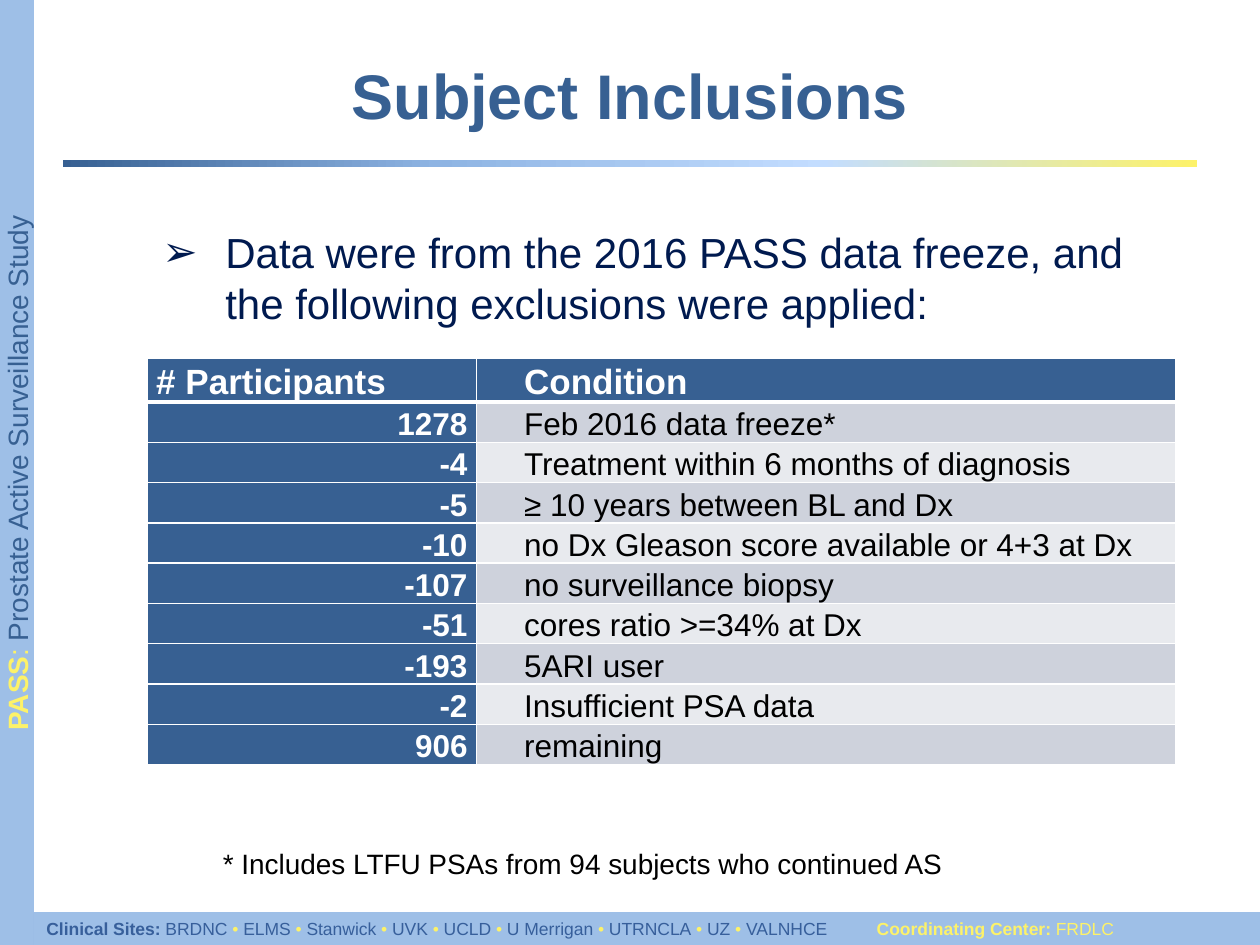
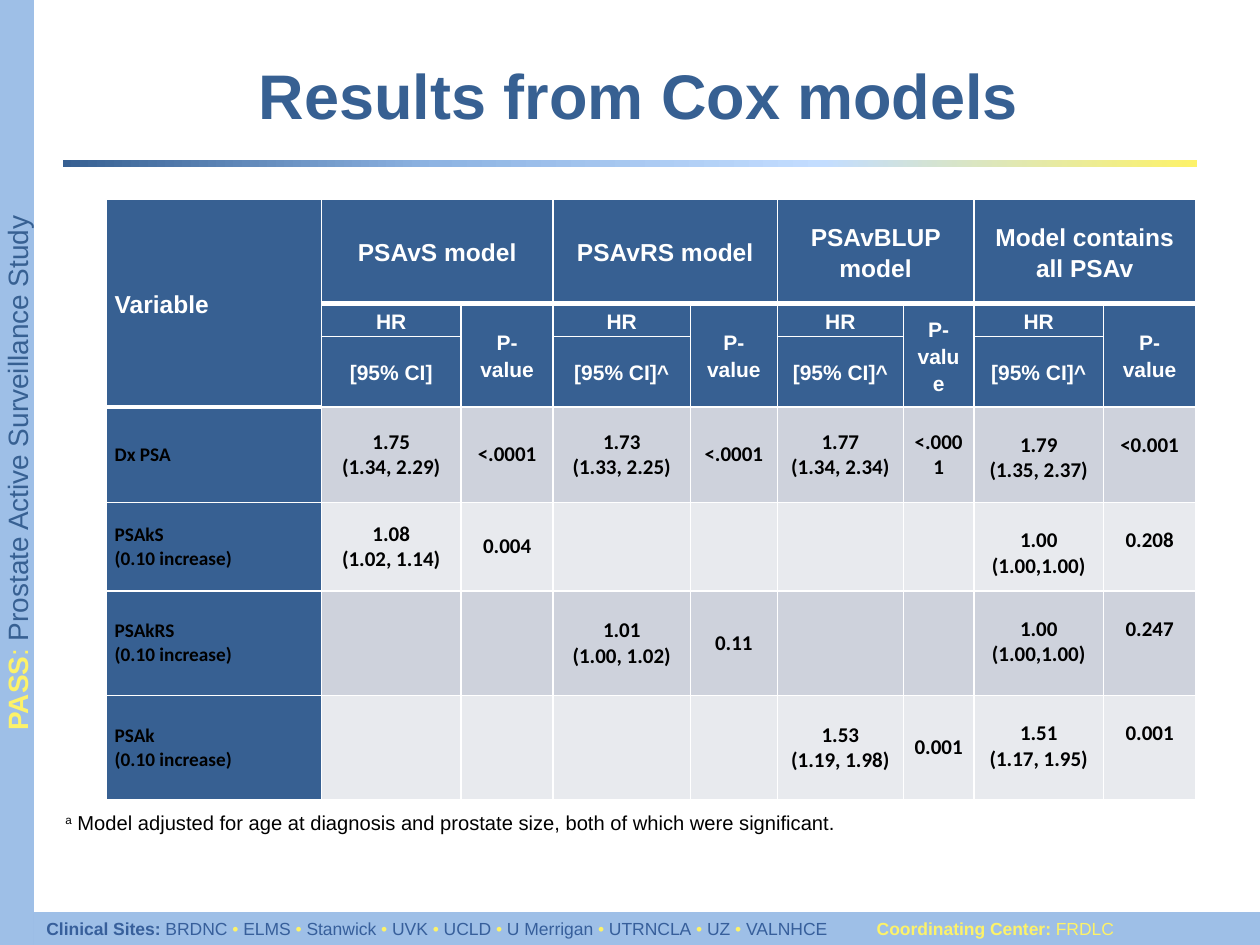
from lxml import etree
from pptx import Presentation
from pptx.dml.color import RGBColor
from pptx.enum.shapes import MSO_SHAPE as Shape
from pptx.enum.text import MSO_ANCHOR as Anchor, PP_ALIGN as Align
from pptx.oxml.ns import qn
from pptx.util import Inches, Pt

BLUE = RGBColor(0x37, 0x60, 0x92)
FOOTER_BLUE = RGBColor(0x37, 0x5F, 0x9B)
BAND_BLUE = RGBColor(0x8E, 0xB4, 0xE3)
PALE_BLUE = RGBColor(0xC3, 0xDD, 0xFF)
YELLOW = RGBColor(0xFD, 0xF2, 0x69)
NAVY = RGBColor(0x00, 0x1A, 0x4F)
DARK_ROW = RGBColor(0xCE, 0xD2, 0xDC)
LIGHT_ROW = RGBColor(0xE8, 0xEA, 0xEE)
WHITE = RGBColor(0xFF, 0xFF, 0xFF)
BLACK = RGBColor(0x00, 0x00, 0x00)

SITES = ["BRDNC", "ELMS", "Stanwick", "UVK", "UCLD", "U Merrigan",
         "UTRNCLA", "UZ", "VALNHCE"]
COORDINATING_CENTER = "FRDLC"

EXCLUSIONS = [
    ("1278", "Feb 2016 data freeze*"),
    ("-4", "Treatment within 6 months of diagnosis"),
    ("-5", "≥ 10 years between BL and Dx"),
    ("-10", "no Dx Gleason score available or 4+3 at Dx"),
    ("-107", "no surveillance biopsy"),
    ("-51", "cores ratio >=34% at Dx"),
    ("-193", "5ARI user"),
    ("-2", "Insufficient PSA data"),
    ("906", "remaining"),
]

MODELS = [
    ("PSAvS model", "[95% CI]"),
    ("PSAvRS model", "[95% CI]^"),
    ("PSAvBLUP model", "[95% CI]^"),
    ("Model contains all PSAv", "[95% CI]^"),
]

# Each variable has one (hazard ratio, interval, p-value) or None per model.
COX_RESULTS = [
    ("Dx PSA", [("1.75", "(1.34, 2.29)", "<.0001"),
                ("1.73", "(1.33, 2.25)", "<.0001"),
                ("1.77", "(1.34, 2.34)", "<.0001"),
                ("1.79", "(1.35, 2.37)", "<0.001")]),
    ("PSAkS\n(0.10 increase)", [("1.08", "(1.02, 1.14)", "0.004"), None, None,
                                ("1.00", "(1.00,1.00)", "0.208")]),
    ("PSAkRS\n(0.10 increase)", [None, ("1.01", "(1.00, 1.02)", "0.11"), None,
                                 ("1.00", "(1.00,1.00)", "0.247")]),
    ("PSAk\n(0.10 increase)", [None, None, ("1.53", "(1.19, 1.98)", "0.001"),
                               ("1.51", "(1.17, 1.95)", "0.001")]),
]


def box(left, top, width, height):
    return Inches(left), Inches(top), Inches(width), Inches(height)


def format_run(run, size, color, bold=False, font="Arial"):
    run.font.name = font
    run.font.size = Pt(size)
    run.font.bold = bold
    run.font.color.rgb = color


def add_runs(paragraph, size, pieces):
    """Append runs given as (text, colour, bold)."""
    for text, color, bold in pieces:
        run = paragraph.add_run()
        run.text = text
        format_run(run, size, color, bold)


def set_indent(paragraph, margin, indent):
    properties = paragraph._p.get_or_add_pPr()
    properties.set("marL", str(Inches(margin)))
    properties.set("indent", str(Inches(indent)))
    return properties


def add_band(slide, position):
    band = slide.shapes.add_shape(Shape.RECTANGLE, *box(*position))
    band.shadow.inherit = False
    band.line.fill.background()
    band.fill.solid()
    band.fill.fore_color.rgb = BAND_BLUE
    color = band._element.spPr.find(f".//{qn('a:srgbClr')}")
    etree.SubElement(color, qn("a:alpha"), val="85000")
    return band


def add_footer(slide):
    frame = add_band(slide, (0.27, 7.24, 9.73, 0.27)).text_frame
    frame.vertical_anchor = Anchor.TOP
    paragraph = frame.paragraphs[0]
    paragraph.alignment = Align.LEFT
    tabs = etree.SubElement(paragraph._p.get_or_add_pPr(), qn("a:tabLst"))
    etree.SubElement(tabs, qn("a:tab"), pos=str(Inches(6.59)), algn="l")

    pieces = [("Clinical Sites:", FOOTER_BLUE, True)]
    for index, site in enumerate(SITES):
        if index:
            pieces.append((" •", YELLOW, False))
        pieces.append((f" {site}", FOOTER_BLUE, False))
    pieces += [("\tCoordinating Center:", YELLOW, True),
               (f" {COORDINATING_CENTER}", YELLOW, False)]
    add_runs(paragraph, 10, pieces)


def add_sidebar(slide):
    frame = add_band(slide, (0, 0, 0.27, 7.51)).text_frame
    frame._txBody.bodyPr.set("vert", "vert270")
    frame.vertical_anchor = Anchor.MIDDLE
    frame.paragraphs[0].alignment = Align.CENTER
    add_runs(frame.paragraphs[0], 16, [
        ("PASS", YELLOW, True), (": ", YELLOW, False),
        ("Prostate Active Surveillance Study", BLUE, False)])


def add_gradient_rule(slide):
    rule = slide.shapes.add_shape(Shape.RECTANGLE, *box(0.5, 1.27, 9, 0.06))
    rule.shadow.inherit = False
    rule.line.fill.background()
    rule.fill.gradient()
    rule.fill.gradient_angle = 0
    stops = rule._element.spPr.find(f".//{qn('a:gsLst')}")
    for stop in list(stops):
        stops.remove(stop)
    for percent, color in [(0, BLUE), (33, BAND_BLUE), (67, PALE_BLUE), (100, YELLOW)]:
        stop = etree.SubElement(stops, qn("a:gs"), pos=str(percent * 1000))
        etree.SubElement(stop, qn("a:srgbClr"), val=str(color))


def add_text(slide, position, size, pieces):
    frame = slide.shapes.add_textbox(*box(*position)).text_frame
    frame.word_wrap = True
    add_runs(frame.paragraphs[0], size, pieces)
    return frame


def add_study_slide(presentation, title):
    slide = presentation.slides.add_slide(presentation.slide_layouts[6])
    add_footer(slide)
    add_sidebar(slide)
    add_gradient_rule(slide)
    frame = add_text(slide, (0.75, 0.25, 8.5, 1), 36, [(title, BLUE, True)])
    frame.vertical_anchor = Anchor.MIDDLE
    frame.paragraphs[0].alignment = Align.CENTER
    return slide


def add_bullet(slide, text):
    frame = add_text(slide, (0.75, 1.75, 8.5, 5.25), 24, [(text, NAVY, False)])
    paragraph = frame.paragraphs[0]
    paragraph.space_before = Pt(12)
    properties = set_indent(paragraph, 0.94, -0.5)
    etree.SubElement(properties, qn("a:buFont"), typeface="Arial")
    etree.SubElement(properties, qn("a:buChar"), char="➢")


def add_table(slide, left, top, widths, heights):
    """Add a table whose default style draws the thin white cell borders."""
    table = slide.shapes.add_table(
        len(heights), len(widths),
        *box(left, top, sum(widths), sum(heights))).table
    table.first_col = True
    for column, width in zip(table.columns, widths):
        column.width = Inches(width)
    for row, height in zip(table.rows, heights):
        row.height = Inches(height)
    return table


def fill_cell(cell, text, fill, size, color, bold=True, font="Arial",
              align=Align.LEFT, anchor=Anchor.MIDDLE, spacing=1.15, indent=0):
    cell.fill.solid()
    cell.fill.fore_color.rgb = fill
    cell.margin_left = cell.margin_right = Inches(0.07)
    cell.margin_top = cell.margin_bottom = 0
    cell.vertical_anchor = anchor
    cell.text_frame.text = text
    for paragraph in cell.text_frame.paragraphs:
        paragraph.alignment = align
        paragraph.line_spacing = spacing
        if indent:
            set_indent(paragraph, 0, indent)
        for run in paragraph.runs:
            format_run(run, size, color, bold, font)


def thicken_bottom(cell):
    line = etree.Element(qn("a:lnB"), w=str(Pt(3)))
    solid = etree.SubElement(line, qn("a:solidFill"))
    etree.SubElement(solid, qn("a:srgbClr"), val=str(WHITE))
    cell._tc.get_or_add_tcPr().insert(0, line)


def row_fill(index):
    return LIGHT_ROW if index % 2 else DARK_ROW


def add_exclusion_table(slide):
    table = add_table(slide, 1.17, 2.84, [2.61, 5.55],
                      [0.35] + [0.32] * len(EXCLUSIONS))
    layout = {"anchor": Anchor.BOTTOM, "spacing": 1.05}
    for column, (heading, indent) in enumerate([("# Participants", 0), ("Condition", 0.31)]):
        cell = table.cell(0, column)
        fill_cell(cell, heading, BLUE, 20, WHITE, indent=indent, **layout)
        thicken_bottom(cell)
    for index, (count, condition) in enumerate(EXCLUSIONS):
        fill_cell(table.cell(index + 1, 0), count, BLUE, 18, WHITE,
                  align=Align.RIGHT, indent=0.15, **layout)
        fill_cell(table.cell(index + 1, 1), condition, row_fill(index), 18, BLACK,
                  bold=False, indent=0.31, **layout)


def add_cox_header(table):
    def heading(row, column, text, size, last_row, last_column, align=Align.CENTER):
        cell = table.cell(row, column)
        if (row, column) != (last_row, last_column):
            cell.merge(table.cell(last_row, last_column))
        fill_cell(cell, text, BLUE, size, WHITE, align=align)

    heading(0, 0, "Variable", 14, 2, 0, Align.LEFT)
    for index, (model, interval) in enumerate(MODELS):
        ratio, p_value = 2 * index + 1, 2 * index + 2
        heading(0, ratio, model, 14, 0, p_value)
        heading(1, ratio, "HR", 12, 1, ratio)
        heading(2, ratio, interval, 12, 2, ratio)
        heading(1, p_value, "P-value", 12, 2, p_value)
    for cell in [*table.rows[0].cells, table.cell(2, 0)]:
        thicken_bottom(cell)


def add_cox_table(slide):
    table = add_table(slide, 0.84, 1.58,
                      [1.71, 1.11, 0.73, 1.09, 0.69, 1, 0.56, 1.03, 0.73],
                      [0.83, 0.26, 0.56, 0.76, 0.7, 0.83, 0.83])
    add_cox_header(table)
    for index, (variable, results) in enumerate(COX_RESULTS):
        row = index + 3
        fill_cell(table.cell(row, 0), variable, BLUE, 11, BLACK,
                  font="Calibri", spacing=1.0)
        for model, result in enumerate(results):
            ratio, interval, p_value = result or ("", "", "")
            estimate = f"{ratio}\n{interval}" if result else ""
            combined = model == len(MODELS) - 1
            for offset, text in enumerate([estimate, p_value]):
                cell = table.cell(row, 2 * model + 1 + offset)
                fill_cell(cell, text, row_fill(index), 12, BLACK, font="Calibri",
                          align=Align.CENTER, spacing=1.0,
                          anchor=Anchor.TOP if combined else Anchor.MIDDLE)
                if combined:
                    cell.margin_top = Inches(0.2)


def add_inclusions_slide(presentation):
    slide = add_study_slide(presentation, "Subject Inclusions")
    add_bullet(slide, "Data were from the 2016 PASS data freeze, and "
                      "the following exclusions were applied:")
    add_exclusion_table(slide)
    add_text(slide, (1.67, 6.67, 6.58, 0.37), 16, [
        ("* Includes LTFU PSAs from 94 subjects who continued AS", BLACK, False)])


def add_results_slide(presentation):
    slide = add_study_slide(presentation, " Results from Cox models")
    add_cox_table(slide)
    note = add_text(slide, (0.42, 6.38, 9.33, 0.29), 11.5, [
        ("a", BLACK, False),
        (" Model adjusted for age at diagnosis and prostate size, "
         "both of which were significant.", BLACK, False)])
    marker = note.paragraphs[0].runs[0]
    marker._r.get_or_add_rPr().set("baseline", "30000")


def main():
    presentation = Presentation()
    presentation.slide_width = Inches(10)
    presentation.slide_height = Inches(7.5)
    add_inclusions_slide(presentation)
    add_results_slide(presentation)
    presentation.save("out.pptx")


if __name__ == "__main__":
    main()
